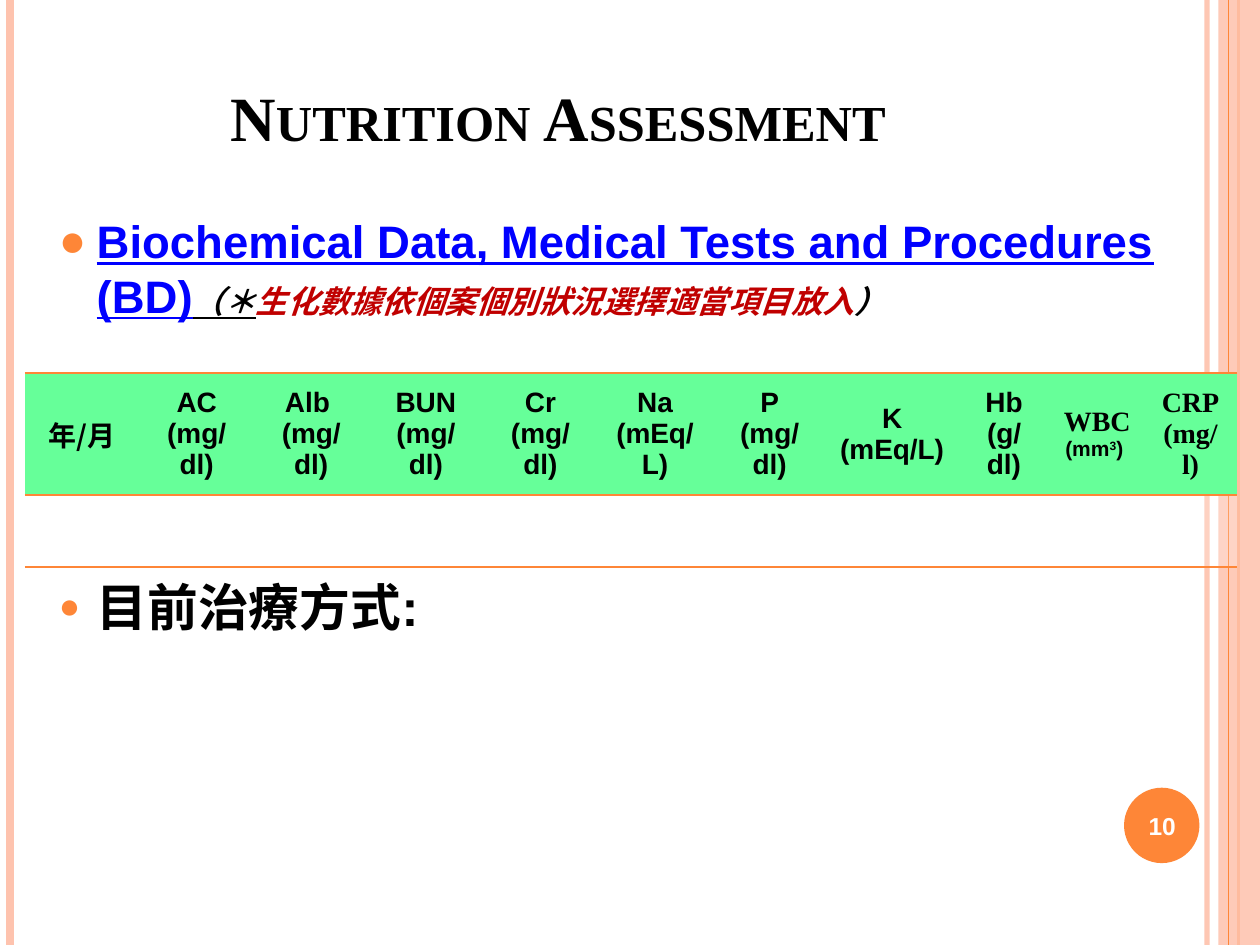
from lxml import etree
from pptx import Presentation
from pptx import util as u
from pptx.dml.color import RGBColor
from pptx.enum import shapes, text
from pptx.oxml import ns

Cm, Pt = u.Cm, u.Pt
INK = dict(black="000000", white="FFFFFF", blue="0000FF", red="C00000",
           orange="FE8637", peach="FEC3AE", green="66FF99")
SANS, SERIF, CJK = "Arial", "Times New Roman", "Noto Sans CJK SC"

# Content: a run is (words, style)
TITLE = "Nutrition Assessment"
NOTE = dict(size=18, font=SANS, ital=True)
BODY = [
    dict(gap=6, mark=100, runs=[
        ("Biochemical Data, Medical Tests and Procedures (BD)",
         dict(size=26, font=SANS, ink="blue", line=True)),
        ("（＊", dict(NOTE, line=True)),
        ("生化數據依個案個別狀況選擇適當項目放入", dict(NOTE, font=SERIF, ink="red")),
        ("）", dict(NOTE, font=SERIF))]),
    dict(gap=145, mark=70, runs=[("目前治療方式:", dict(size=29, font=SANS))]),
]
ARIAL = dict(size=16, font=SANS)
TIMES = dict(size=16, font=SERIF)
SMALL = dict(size=12, font=SANS)
TESTS = [("AC", "(mg/dl)"), ("Alb ", "(mg/dl)"), ("BUN", "(mg/dl)"),
         ("Cr", "(mg/dl)"), ("Na", "(mEq/L)"), ("P", "(mg/dl)"),
         ("K", "(mEq/L)"), ("Hb", "(g/dl)")]
HEADS = [[[("年/月", dict(size=16, font=CJK))]]]
HEADS += [[[(line, ARIAL)] for line in test] for test in TESTS]
HEADS += [[[("WBC", TIMES)],
           [("(mm", SMALL), ("3", dict(SMALL, base=30)), (") ", SMALL)]],
          [[("CRP", TIMES)], [("(mg/l)", TIMES)]]]
COLS = [2.31] * 7 + [2.63] + [1.88] * 3
ROWS = [2.46, 1.45]
# Vertical rules: x, width, colour, opacity
RULES = [(24.33, 3, "peach", 93), (0.2, 4.5, "peach", 100),
         (24.97, 1.5, "orange", 100), (24.77, 0.75, "orange", 100)]
BAND, HIGH = (24.56, 0, 0.84, 19.05), 19.05


def tag(up, name, **attrs):
    return etree.SubElement(up, ns.qn("a:" + name), attrs)


def rgb(ink):
    return RGBColor.from_string(INK[ink])


def fade(root, part):
    """Set the opacity, in percent, of the first colour below root."""
    if part < 100:
        tag(next(root.iter(ns.qn("a:srgbClr"))), "alpha", val=str(part * 1000))


def add_run(para, words, size, font, ink="black", ital=False, line=False, base=0):
    run = para.add_run()
    run.text = words
    face = run.font
    face.size, face.name, face.bold = Pt(size), font, True
    face.italic, face.underline = ital, line
    face.color.rgb = rgb(ink)
    props = run._r.get_or_add_rPr()
    tag(props, "ea", typeface=CJK)
    if base:
        props.set("baseline", str(base * 1000))
    return props


def fill_text(frame, paras, align):
    for i, runs in enumerate(paras):
        para = frame.add_paragraph() if i else frame.paragraphs[0]
        para.alignment = align
        for words, style in runs:
            add_run(para, words, **style)


def add_shape(slide, kind, box, ink, part=100):
    shape = slide.shapes.add_shape(kind, *map(Cm, box))
    shape.shadow.inherit = False
    shape.fill.solid()
    shape.fill.fore_color.rgb = rgb(ink)
    shape.line.fill.background()
    fade(shape._element.spPr, part)


def add_rule(slide, x, width, ink, part):
    rule = slide.shapes.add_connector(shapes.MSO_CONNECTOR.STRAIGHT,
                                      Cm(x), 0, Cm(x), Cm(HIGH))
    rule.line.width = Pt(width)
    rule.line.color.rgb = rgb(ink)
    fade(rule._element.spPr, part)
    tag(rule._element.spPr, "effectLst")


def add_box(slide, box):
    frame = slide.shapes.add_textbox(*map(Cm, box)).text_frame
    frame.word_wrap = True
    return frame


def set_bullet(para, size):
    props = para._p.get_or_add_pPr()
    props.set("marL", str(Cm(0.76)))
    props.set("indent", str(-Cm(0.76)))
    tag(tag(props, "buClr"), "srgbClr", val=INK["orange"])
    tag(props, "buSzPct", val=str(size * 1000))
    tag(props, "buFont", typeface=SANS)
    tag(props, "buChar", char="●")


def style_cell(cell, ink, part):
    cell.vertical_anchor = text.MSO_ANCHOR.MIDDLE
    props = cell._tc.get_or_add_tcPr()
    for side in "LR":
        tag(tag(props, "ln" + side, w="0"), "noFill")
    for side in "TB":
        edge = tag(tag(props, "ln" + side, w=str(Pt(1))), "solidFill")
        tag(edge, "srgbClr", val=INK["orange"])
    fill = tag(props, "solidFill")
    tag(fill, "srgbClr", val=INK[ink])
    fade(fill, part)


def main():
    deck = Presentation()
    deck.slide_width, deck.slide_height = Cm(25.4), Cm(HIGH)
    slide = deck.slides.add_slide(deck.slide_layouts[5])
    centre, left = text.PP_ALIGN.CENTER, text.PP_ALIGN.LEFT

    # Side decoration and number disc
    for rule in RULES[:3]:
        add_rule(slide, *rule)
    add_shape(slide, shapes.MSO_SHAPE.RECTANGLE, BAND, "peach", 87)
    add_rule(slide, *RULES[3])
    add_shape(slide, shapes.MSO_SHAPE.OVAL, (22.66, 15.88, 1.52, 1.52), "orange")

    # Title, set a little left of its middle
    title = slide.shapes.title
    title.left, title.top, title.width, title.height = map(Cm, (1.27, 0.76, 20.75, 3.18))
    frame = title.text_frame
    frame.auto_size = text.MSO_AUTO_SIZE.NONE
    frame.vertical_anchor = text.MSO_ANCHOR.MIDDLE
    frame.margin_right = Cm(1.04)
    frame.paragraphs[0].alignment = centre
    add_run(frame.paragraphs[0], TITLE, 36, SERIF).set("cap", "small")

    # Bulleted body, with room for the table
    frame = add_box(slide, (0.94, 4.17, 24.23, 13.31))
    fill_text(frame, [item["runs"] for item in BODY], left)
    for para, item in zip(frame.paragraphs, BODY):
        para.space_before = Pt(item["gap"])
        set_bullet(para, item["mark"])

    # Slide number
    frame = add_box(slide, (22.58, 15.93, 1.7, 1.45))
    frame.vertical_anchor = text.MSO_ANCHOR.MIDDLE
    fill_text(frame, [[("10", dict(size=14, font=SANS, ink="white"))]], centre)

    # Table of laboratory values
    table = slide.shapes.add_table(len(ROWS), len(COLS), Cm(0.5), Cm(7.52),
                                   Cm(sum(COLS)), Cm(sum(ROWS))).table
    for col, wide in zip(table.columns, COLS):
        col.width = Cm(wide)
    for row, tall in zip(table.rows, ROWS):
        row.height = Cm(tall)
    for i, head in enumerate(HEADS):
        style_cell(table.cell(0, i), "green", 100)
        style_cell(table.cell(1, i), "white", 20)
        fill_text(table.cell(0, i).text_frame, head, centre)

    deck.save("out.pptx")


if __name__ == "__main__":
    main()
